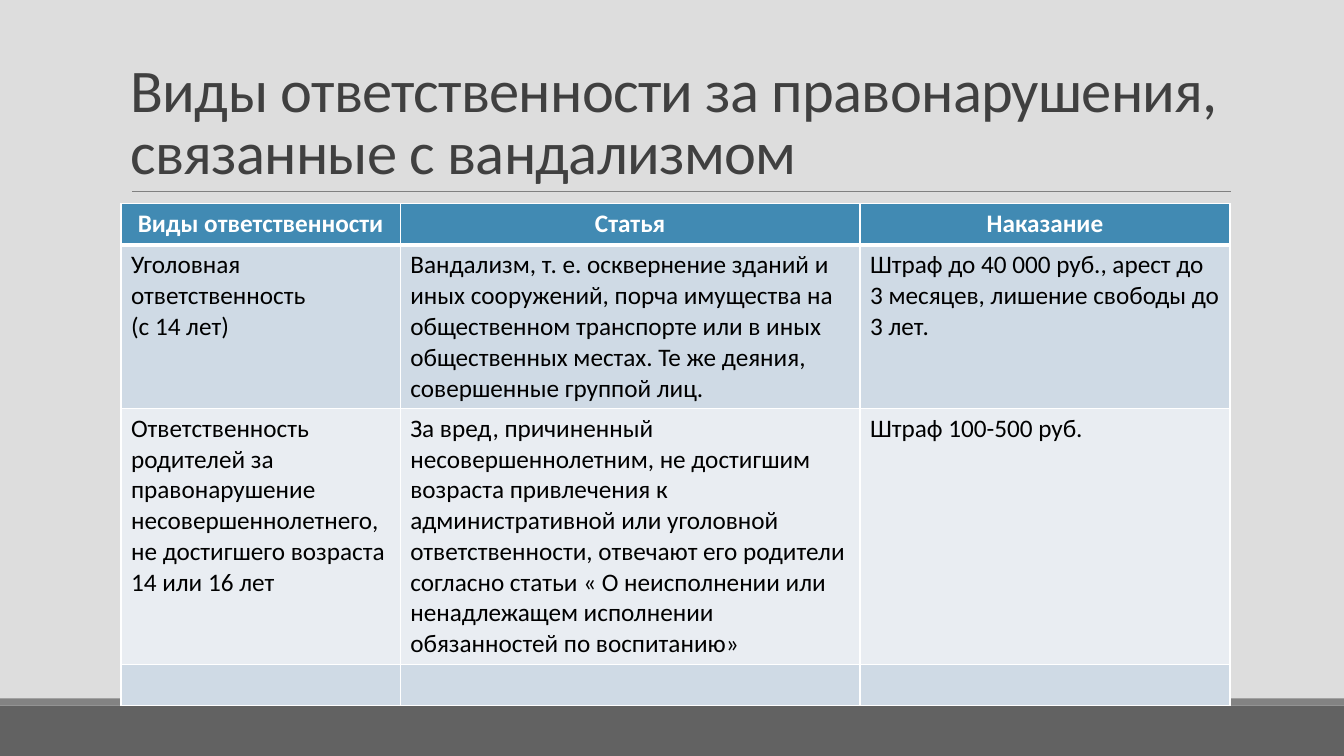
"""Build a slide on liability for vandalism: a title over a table."""
from lxml.etree import SubElement as Sub
from pptx import Presentation
from pptx.dml.color import RGBColor as Rgb
from pptx.enum.shapes import MSO_CONNECTOR as Link, MSO_SHAPE as Shape
from pptx.enum.text import MSO_ANCHOR as Anchor, PP_ALIGN as Align
from pptx.oxml.ns import qn
from pptx.util import Inches, Pt

TITLE = "Виды ответственности за правонарушения, связанные с вандализмом"
ROWS = [
    ("Виды ответственности", "Статья", "Наказание"),
    ("Уголовная ответственность\n(с 14 лет)",
     "Вандализм, т. е. осквернение зданий и иных сооружений, порча имущества "
     "на общественном транспорте или в иных общественных местах. "
     "Те же деяния, совершенные группой лиц.",
     "Штраф до 40 000 руб., арест до 3 месяцев, лишение свободы до 3 лет."),
    ("Ответственность родителей за правонарушение несовершеннолетнего, "
     "не достигшего возраста 14 или 16 лет",
     "За вред, причиненный несовершеннолетним, не достигшим возраста "
     "привлечения к административной или уголовной ответственности, отвечают "
     "его родители согласно статьи « О неисполнении или ненадлежащем "
     "исполнении обязанностей по воспитанию»",
     "Штраф 100-500 руб."),
    ("", "", ""),
]
COLS = (2.77, 4.56, 3.67)
HIGH = (0.41, 1.62, 2.54, 0.41)
WIDE, TALL = 13.33, 7.5
LEFT, TOP = 1.2, 2.02
HEX = {"back": "DDDDDD", "foot": "626262", "strip": "838383", "rule": "808080",
       "title": "404040", "head": "418AB3", "odd": "CFDAE5", "even": "E9EDF2",
       "white": "FFFFFF", "black": "000000"}
BANDS = [(TALL - 0.5, 0.5, "foot"), (TALL - 0.57, 0.07, "strip")]
HEAD = {"size": Pt(18), "name": "Calibri", "bold": True}
BODY = {**HEAD, "bold": False}
LARGE = {**BODY, "size": Pt(43.2)}


def tint(fill, name):
    fill.solid()
    fill.fore_color.rgb = Rgb.from_string(HEX[name])


def style(part, form, name):
    for key, val in form.items():
        setattr(part.font, key, val)
    part.font.color.rgb = Rgb.from_string(HEX[name])


def edge(cell, head):
    props = cell._tc.get_or_add_tcPr()
    for side in "LRTB":
        thick = 3 if head and side == "B" else 1
        line = Sub(props, qn(f"a:ln{side}"), w=str(Pt(thick)))
        Sub(Sub(line, qn("a:solidFill")), qn("a:srgbClr"), val=HEX["white"])


def frame(slide):
    tint(slide.background.fill, "back")
    for top, high, name in BANDS:
        band = slide.shapes.add_shape(
            Shape.RECTANGLE, 0, Inches(top), Inches(WIDE), Inches(high))
        band.shadow.inherit = False
        tint(band.fill, name)
        band.line.fill.background()
    rule = slide.shapes.add_connector(
        Link.STRAIGHT, Inches(1.31), Inches(1.9), Inches(12.21), Inches(1.9))
    rule.line.width = Pt(0.5)
    tint(rule.line.fill, "rule")
    Sub(rule._element.spPr, qn("a:effectLst"))


def title(slide):
    box = slide.shapes.add_textbox(
        Inches(LEFT), Inches(0.31), Inches(sum(COLS)), Inches(1.59))
    text = box.text_frame
    text.word_wrap, text.vertical_anchor = True, Anchor.BOTTOM
    para = text.paragraphs[0]
    para.line_spacing = 0.85
    run = para.add_run()
    run.text = TITLE
    style(run, LARGE, "title")
    run._r.get_or_add_rPr().set("spc", "-50")


def table(slide):
    grid = slide.shapes.add_table(
        len(ROWS), len(COLS), Inches(LEFT), Inches(TOP),
        Inches(sum(COLS)), Inches(sum(HIGH))).table
    for col, wide in zip(grid.columns, COLS):
        col.width = Inches(wide)
    for r, row in enumerate(ROWS):
        grid.rows[r].height = Inches(HIGH[r])
        head = r == 0
        for c, words in enumerate(row):
            cell = grid.cell(r, c)
            edge(cell, head)
            tint(cell.fill, "head" if head else "odd" if r % 2 else "even")
            cell.text = words
            for para in cell.text_frame.paragraphs:
                para.alignment = Align.CENTER if head else Align.LEFT
                for run in para.runs:
                    style(run, HEAD if head else BODY,
                          "white" if head else "black")


def main():
    deck = Presentation()
    deck.slide_width, deck.slide_height = Inches(WIDE), Inches(TALL)
    slide = deck.slides.add_slide(deck.slide_layouts[6])
    for step in (frame, title, table):
        step(slide)
    deck.save("out.pptx")


if __name__ == "__main__":
    main()
